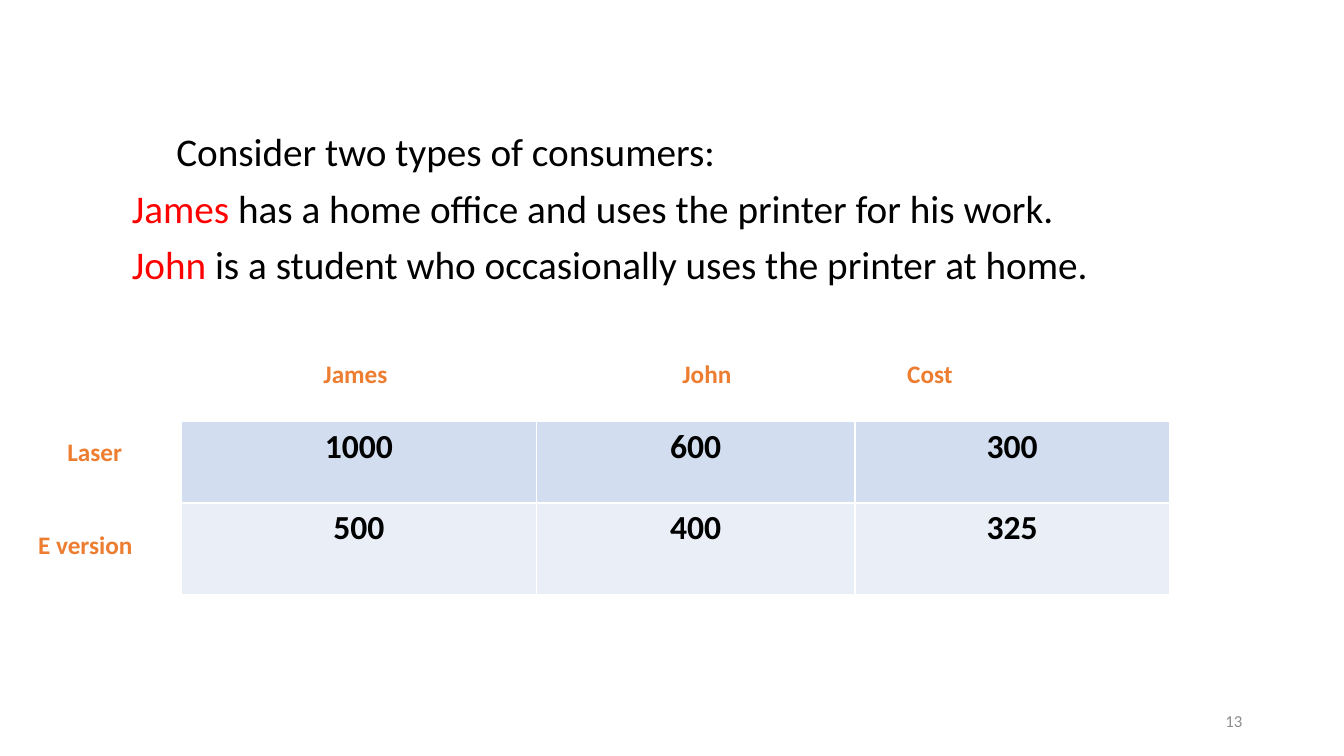
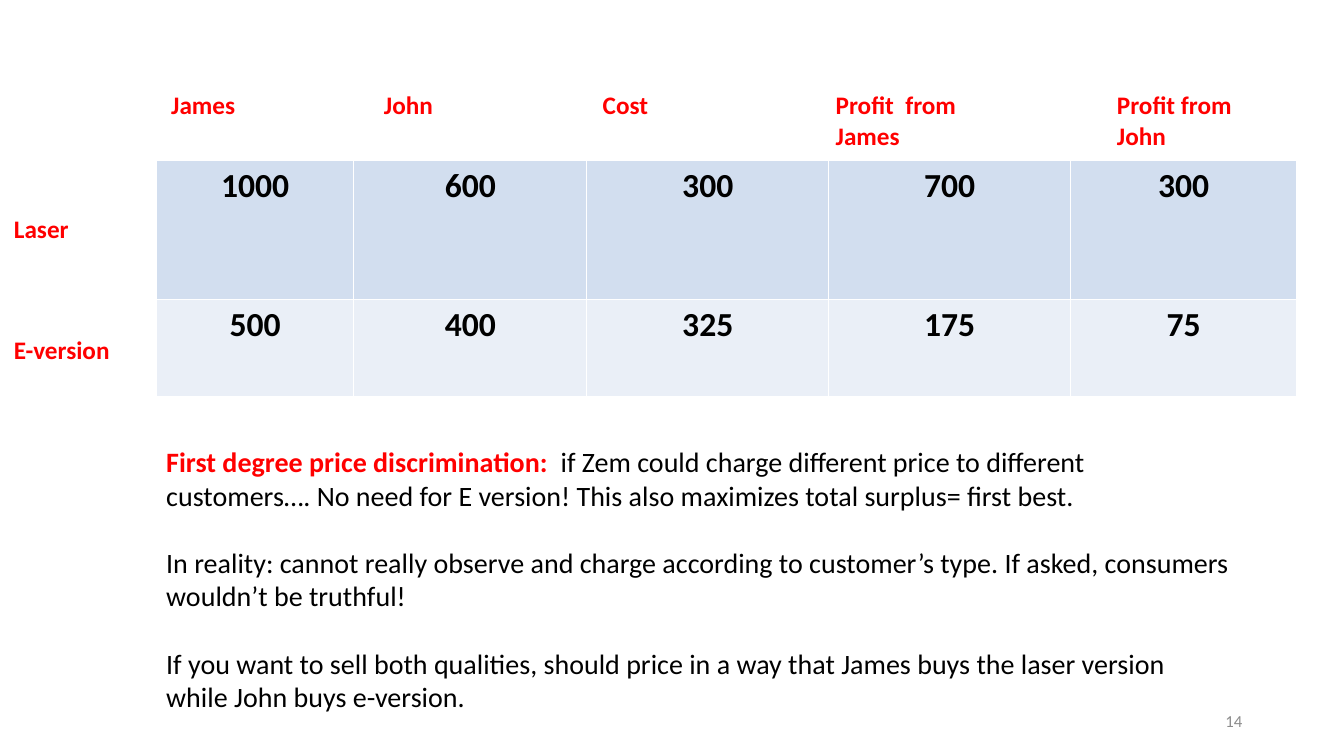
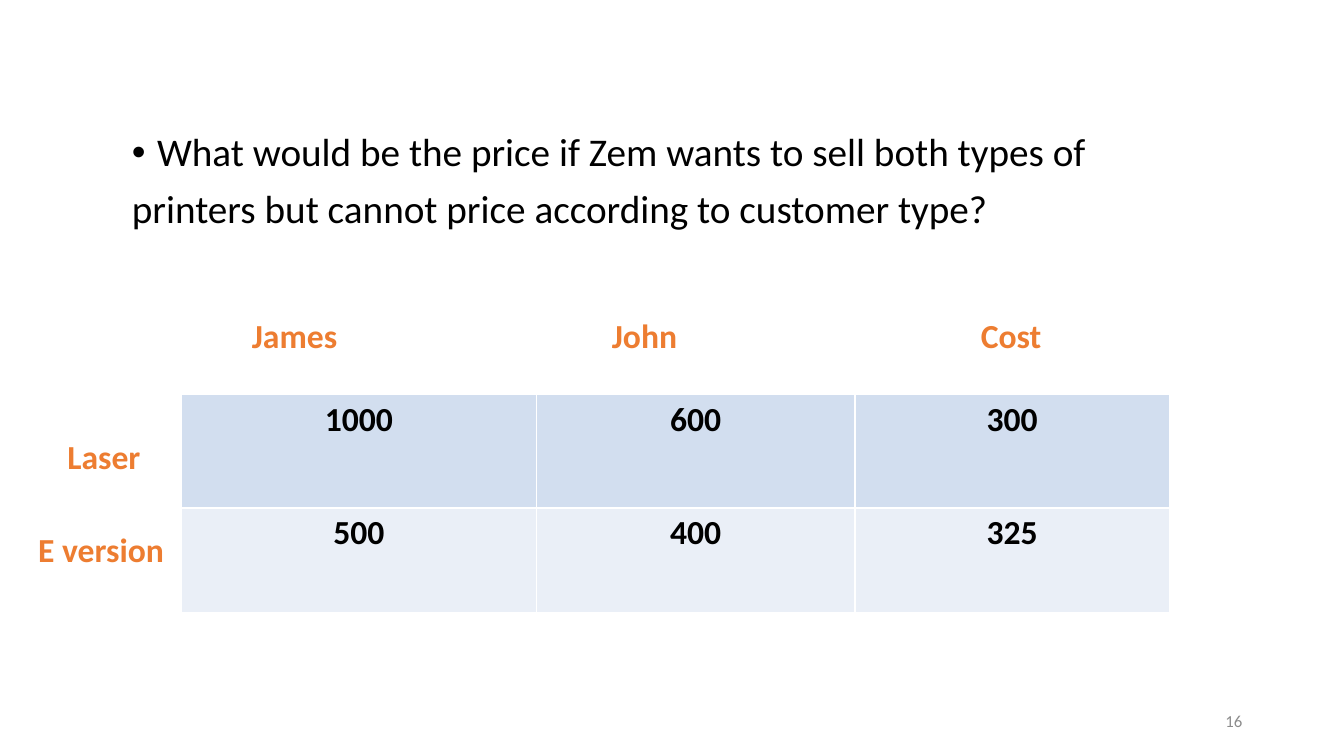
import pptx
import pptx.dml.color
import pptx.enum.text
import pptx.oxml
import pptx.oxml.ns
import pptx.util

Inches = pptx.util.Inches
Pt = pptx.util.Pt
RGBColor = pptx.dml.color.RGBColor
Align = pptx.enum.text.PP_ALIGN
Anchor = pptx.enum.text.MSO_ANCHOR

FONT = "Calibri"
BLACK = RGBColor(0x00, 0x00, 0x00)
RED = RGBColor(0xFF, 0x00, 0x00)
ORANGE = RGBColor(0xED, 0x7D, 0x31)
GREY = RGBColor(0x8C, 0x8C, 0x8C)
ROW_FILLS = (RGBColor(0xD2, 0xDE, 0xEF), RGBColor(0xEA, 0xEF, 0xF7))

PRICES = [["1000", "600", "300"], ["500", "400", "325"]]
PROFITS = [["700", "300"], ["175", "75"]]
PRICE_COLUMNS = [3.52, 3.16, 3.12]

BORDER = (
    '<a:{side} {namespace} w="12700"><a:solidFill><a:srgbClr val="FFFFFF"/>'
    "</a:solidFill></a:{side}>"
)


class Deck:
    def __init__(self):
        self.presentation = pptx.Presentation()
        self.presentation.slide_width = Inches(13.33)
        self.presentation.slide_height = Inches(7.5)
        self.slide = None

    def new_slide(self, number):
        """Start a blank slide with its page number."""
        self.slide = self.presentation.slides.add_slide(
            self.presentation.slide_layouts[6])
        frame = self.text_frame(9.42, 6.95, 3, 0.4)
        frame.vertical_anchor = Anchor.MIDDLE
        frame.paragraphs[0].alignment = Align.RIGHT
        self.run(frame.paragraphs[0], str(number), 12, GREY)

    def text_frame(self, left, top, width, height, wrap=True):
        shape = self.slide.shapes.add_textbox(
            Inches(left), Inches(top), Inches(width), Inches(height))
        shape.text_frame.word_wrap = wrap
        return shape.text_frame

    def run(self, paragraph, text, size, color, bold=False):
        run = paragraph.add_run()
        run.text = text
        run.font.name = FONT
        run.font.size = Pt(size)
        run.font.bold = bold
        run.font.color.rgb = color

    def paragraphs(self, frame, paragraphs, size):
        """Fill a frame; each paragraph is a list of (text, color, bold)."""
        for index, runs in enumerate(paragraphs):
            paragraph = frame.paragraphs[0] if index == 0 else frame.add_paragraph()
            for text, color, bold in runs:
                self.run(paragraph, text, size, color, bold)
        return frame.paragraphs

    def body(self, paragraphs):
        frame = self.text_frame(1.21, 1.27, 9.78, 5.56)
        result = self.paragraphs(frame, paragraphs, 28)
        for paragraph in result:
            paragraph.line_spacing = 0.9
            paragraph.space_before = Pt(10)
        return result

    def indent(self, paragraph, first_line, margin=0, bullet=None):
        properties = paragraph._p.get_or_add_pPr()
        properties.set("marL", str(Inches(margin)))
        properties.set("indent", str(Inches(first_line)))
        if bullet:
            namespace = pptx.oxml.ns.nsdecls("a")
            properties.append(pptx.oxml.parse_xml(
                f'<a:buFont {namespace} typeface="Arial"/>'))
            properties.append(pptx.oxml.parse_xml(
                f'<a:buChar {namespace} char="{bullet}"/>'))

    def label(self, text, left, top, size, color):
        frame = self.text_frame(left, top, 1.5, 0.4, wrap=False)
        self.run(frame.paragraphs[0], text, size, color, True)

    def column_labels(self, labels, top, size, color):
        for text, left in labels:
            self.label(text, left, top, size, color)

    def row_labels(self, labels, size, color):
        for text, left, top in labels:
            self.label(text, left, top, size, color)

    def table(self, left, top, widths, heights, values):
        table = self.slide.shapes.add_table(
            len(heights), len(widths), Inches(left), Inches(top),
            Inches(sum(widths)), Inches(sum(heights))).table
        table.first_row = False
        table.horz_banding = False
        for column, width in zip(table.columns, widths):
            column.width = Inches(width)
        for row, height, texts, fill in zip(table.rows, heights, values, ROW_FILLS):
            row.height = Inches(height)
            for cell, text in zip(row.cells, texts):
                self.cell(cell, text, fill)

    def cell(self, cell, text, fill):
        properties = cell._tc.get_or_add_tcPr()
        for side in ("lnL", "lnR", "lnT", "lnB"):
            properties.append(pptx.oxml.parse_xml(
                BORDER.format(side=side, namespace=pptx.oxml.ns.nsdecls("a"))))
        cell.fill.solid()
        cell.fill.fore_color.rgb = fill
        paragraph = cell.text_frame.paragraphs[0]
        paragraph.alignment = Align.CENTER
        self.run(paragraph, text, 24, BLACK, True)


def consumer_types(deck):
    deck.new_slide(13)
    paragraphs = deck.body([
        [("Consider two types of consumers:", BLACK, False)],
        [("James", RED, False),
         (" has a home office and uses the printer for his work.", BLACK, False)],
        [("John", RED, False),
         (" is a student who occasionally uses the printer at home.", BLACK, False)],
    ])
    deck.indent(paragraphs[0], 0.44)
    deck.table(1.8, 4.18, PRICE_COLUMNS, [0.81, 0.91], PRICES)
    deck.column_labels([("James", 3.11), ("John", 6.67), ("Cost", 8.9)],
                       3.51, 18, ORANGE)
    deck.row_labels([("Laser", 0.57, 4.28), ("E version", 0.28, 5.2)], 18, ORANGE)


def first_degree(deck):
    deck.new_slide(14)
    values = [prices + profits for prices, profits in zip(PRICES, PROFITS)]
    deck.table(1.55, 1.59, [1.96, 2.31, 2.4, 2.4, 2.24], [1.38, 0.96], values)
    deck.column_labels(
        [("James", 1.6), ("John", 3.71), ("Cost", 5.88),
         ("Profit  from James", 8.19), ("Profit from John", 10.98)],
        0.84, 18, RED)
    deck.row_labels([("Laser", 0.04, 2.07), ("E-version", 0.04, 3.27)], 18, RED)

    # Explanation under the table
    frame = deck.text_frame(1.55, 4.36, 10.75, 2.79)
    paragraphs = deck.paragraphs(frame, [
        [("First degree price discrimination:  ", RED, True),
         ("if Zem could charge different price to different customers…. "
          "No need for E version! This also maximizes total surplus= first best.",
          BLACK, False)],
        [("In reality: cannot really observe and charge according to customer’s "
          "type. If asked, consumers wouldn’t be truthful!", BLACK, False)],
        [("If you want to sell both qualities, should price in a way that James "
          "buys the laser version while John buys e-version.", BLACK, False)],
    ], 20)
    for paragraph in paragraphs[:-1]:
        paragraph.space_after = Pt(24)


def price_question(deck):
    deck.new_slide(16)
    paragraphs = deck.body([
        [("What would be the price if Zem wants to sell both types of", BLACK, False)],
        [("printers but cannot price according to customer type?", BLACK, False)],
    ])
    deck.indent(paragraphs[0], -0.25, 0.25, "•")
    deck.table(1.8, 3.91, PRICE_COLUMNS, [1.13, 1.04], PRICES)
    deck.column_labels([("James", 2.4), ("John", 5.97), ("Cost", 9.63)],
                       3.08, 24, ORANGE)
    deck.row_labels([("Laser", 0.57, 4.28), ("E version", 0.28, 5.2)], 24, ORANGE)


def main():
    deck = Deck()
    consumer_types(deck)
    first_degree(deck)
    price_question(deck)
    deck.presentation.save("out.pptx")


if __name__ == "__main__":
    main()
